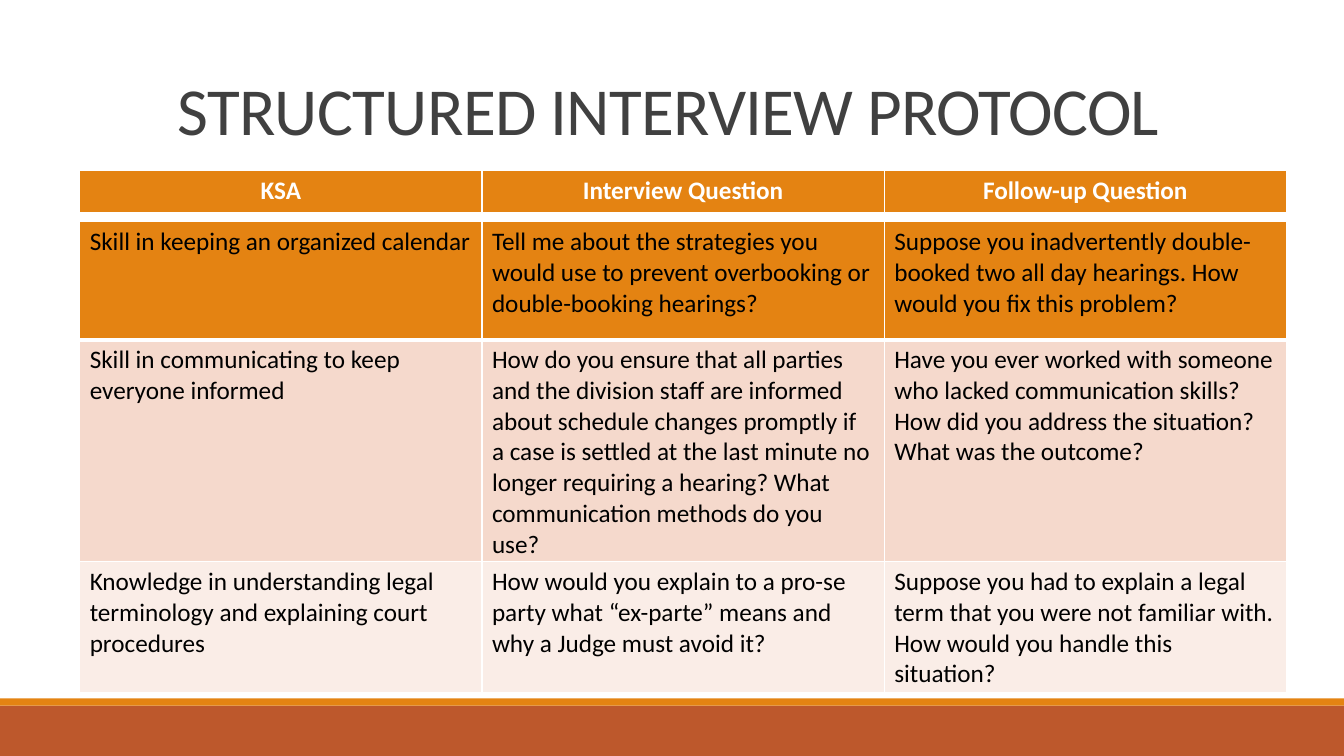
from dataclasses import dataclass

from lxml import etree
from pptx import Presentation
from pptx.dml.color import RGBColor
from pptx.enum.shapes import MSO_SHAPE
from pptx.enum.text import MSO_ANCHOR, PP_ALIGN
from pptx.oxml.ns import qn
from pptx.util import Inches, Pt

RECTANGLE = MSO_SHAPE.RECTANGLE
BOTTOM = MSO_ANCHOR.BOTTOM
CENTER, LEFT = PP_ALIGN.CENTER, PP_ALIGN.LEFT

# Content
TITLE = "STRUCTURED INTERVIEW PROTOCOL "
HEADINGS = ["KSA", "Interview Question", "Follow-up Question"]
QUESTIONS = [
    ["Skill in keeping an organized calendar",
     "Tell me about the strategies you would use to prevent overbooking or "
     "double-booking hearings?",
     "Suppose you inadvertently double-booked two all day hearings. "
     "How would you fix this problem?"],
    ["Skill in communicating to keep everyone informed",
     "How do you ensure that all parties and the division staff are informed "
     "about schedule changes promptly if a case is settled at the last minute "
     "no longer requiring a hearing? What communication methods do you use?",
     "Have you ever worked with someone who lacked communication skills? "
     "How did you address the situation? What was the outcome?"],
    ["Knowledge in understanding legal terminology and explaining court "
     "procedures",
     "How would you explain to a pro-se party what “ex-parte” means and why "
     "a Judge must avoid it?",
     "Suppose you had to explain a legal term that you were not familiar "
     "with. How would you handle this situation?"],
]


@dataclass(frozen=True)
class Theme:
    font: str = "Calibri"
    title_size: int = 48
    table_size: int = 18
    title: str = "404040"
    heading: str = "FFFFFF"
    body: str = "000000"
    border: str = "FFFFFF"
    orange: str = "E48312"
    rust: str = "BD582C"
    rose: str = "F5D9CC"
    pale_rose: str = "FAEDE7"


THEME = Theme()

# Layout, in inches
SLIDE_WIDTH, SLIDE_HEIGHT = 13.33, 7.5
TABLE_LEFT, COLUMN_WIDTH = 0.79, 3.99
HEADING_TOP, HEADING_HEIGHTS = 1.69, [0.43]
QUESTION_TOP, QUESTION_HEIGHTS = 2.2, [1.17, 2.17, 1.28]
BANDS = [(7, 0.5, THEME.rust), (6.93, 0.07, THEME.orange)]


def style_text(paragraph, size, color, align, bold=False):
    paragraph.alignment = align
    font = paragraph.font
    font.name, font.size, font.bold = THEME.font, Pt(size), bold
    font.color.rgb = RGBColor.from_string(color)


def set_borders(cell, bottom_width):
    properties = cell._tc.get_or_add_tcPr()
    widths = {"a:lnL": 1, "a:lnR": 1, "a:lnT": 1, "a:lnB": bottom_width}
    for position, (side, width) in enumerate(widths.items()):
        line = etree.Element(qn(side), w=str(Pt(width)))
        fill = etree.SubElement(line, qn("a:solidFill"))
        etree.SubElement(fill, qn("a:srgbClr"), val=THEME.border)
        properties.insert(position, line)


def add_grid(slide, top, heights, rows, fills, color, align, bold=False):
    columns = len(HEADINGS)
    table = slide.shapes.add_table(
        len(rows), columns, Inches(TABLE_LEFT), Inches(top),
        Inches(COLUMN_WIDTH * columns), Inches(sum(heights))).table
    for column in table.columns:
        column.width = Inches(COLUMN_WIDTH)
    for index, (texts, fill, height) in enumerate(zip(rows, fills, heights)):
        table.rows[index].height = Inches(height)
        for cell, text in zip(table.rows[index].cells, texts):
            cell.text = text
            style_text(cell.text_frame.paragraphs[0], THEME.table_size,
                       color, align, bold)
            cell.fill.solid()
            cell.fill.fore_color.rgb = RGBColor.from_string(fill)
            set_borders(cell, bottom_width=3 if index == 0 else 1)


def main():
    deck = Presentation()
    deck.slide_width, deck.slide_height = Inches(SLIDE_WIDTH), Inches(SLIDE_HEIGHT)
    slide = deck.slides.add_slide(deck.slide_layouts[6])

    # Bands along the foot
    for top, height, color in BANDS:
        band = slide.shapes.add_shape(
            RECTANGLE, 0, Inches(top), Inches(SLIDE_WIDTH), Inches(height))
        band.shadow.inherit = False
        band.fill.solid()
        band.fill.fore_color.rgb = RGBColor.from_string(color)
        band.line.fill.background()

    # Title
    frame = slide.shapes.add_textbox(
        Inches(1.2), Inches(0.31), Inches(11), Inches(1.22)).text_frame
    frame.word_wrap = True
    frame.vertical_anchor = BOTTOM
    heading = frame.paragraphs[0]
    run = heading.add_run()
    run.text = TITLE
    run._r.get_or_add_rPr().set("spc", "-50")
    heading.line_spacing = 0.85
    style_text(heading, THEME.title_size, THEME.title, CENTER)

    # Heading table and question table
    add_grid(slide, HEADING_TOP, HEADING_HEIGHTS, [HEADINGS], [THEME.orange],
             THEME.heading, CENTER, bold=True)
    add_grid(slide, QUESTION_TOP, QUESTION_HEIGHTS, QUESTIONS,
             [THEME.orange, THEME.rose, THEME.pale_rose], THEME.body, LEFT)

    deck.save("out.pptx")


if __name__ == "__main__":
    main()
